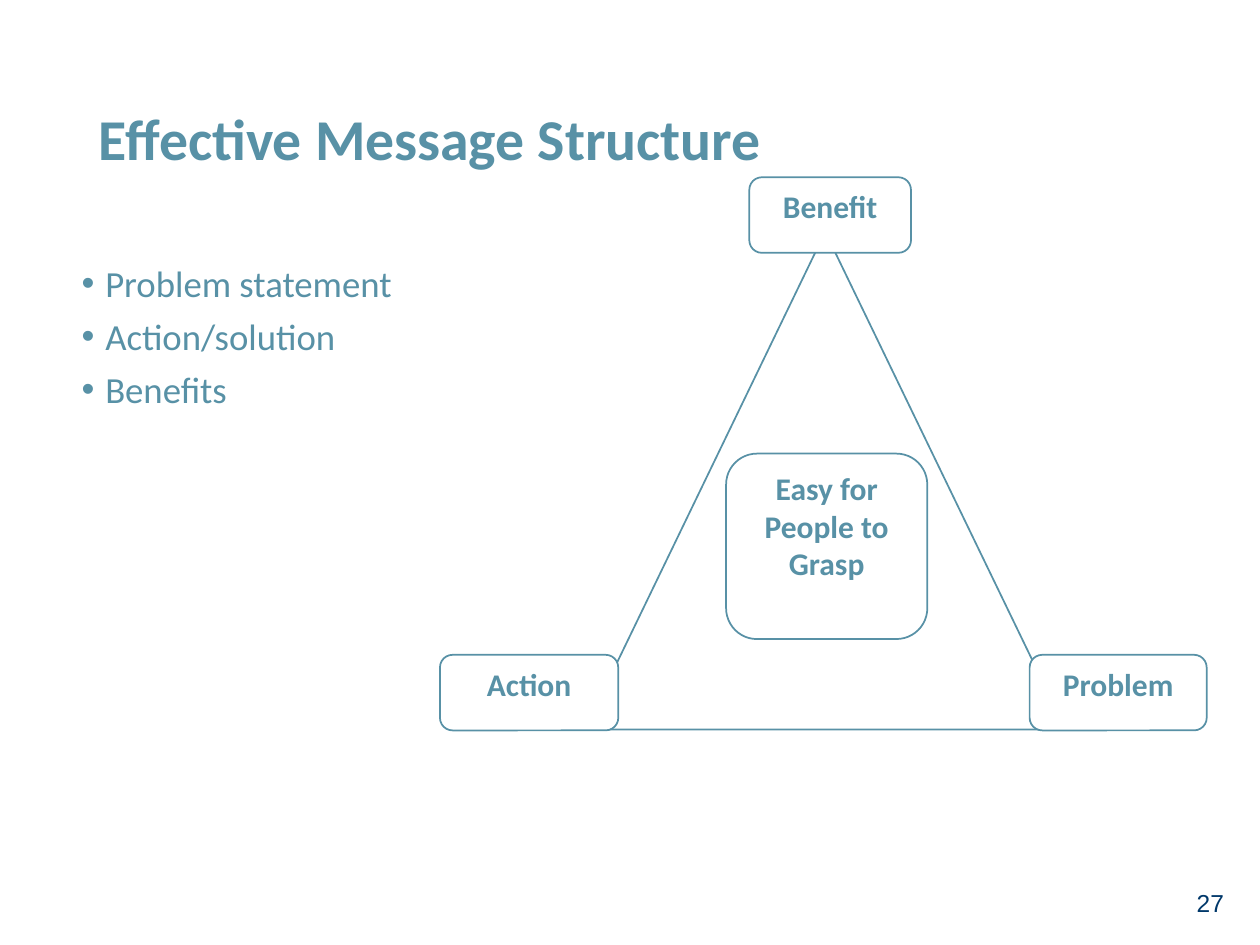
from dataclasses import dataclass

from lxml.etree import SubElement
from pptx import Presentation
from pptx.dml.color import RGBColor
from pptx.enum.shapes import MSO_SHAPE
from pptx.enum.text import MSO_ANCHOR, PP_ALIGN
from pptx.oxml.ns import qn
from pptx.util import Pt


@dataclass(frozen=True)
class Theme:
    teal: RGBColor = RGBColor(0x58, 0x91, 0xA6)
    navy: RGBColor = RGBColor(0x00, 0x38, 0x6A)
    white: RGBColor = RGBColor(0xFF, 0xFF, 0xFF)
    font: str = "Calibri"
    number_font: str = "Arial"
    title_size: int = 33
    bullet_size: int = 21
    label_size: int = 18
    number_size: int = 14


theme = Theme()


def write(paragraph, text, size, bold=False, color=theme.teal, font=theme.font):
    run = paragraph.add_run()
    run.text = text
    run.font.size = Pt(size)
    run.font.bold = bold
    run.font.name = font
    run.font.color.rgb = color


def add_outlined(kind, left, top, width, height):
    """Add a white shape with a thin teal outline."""
    shape = slide.shapes.add_shape(kind, Pt(left), Pt(top), Pt(width), Pt(height))
    shape.shadow.inherit = False
    shape.fill.solid()
    shape.fill.fore_color.rgb = theme.white
    shape.line.color.rgb = theme.teal
    shape.line.width = Pt(1)
    return shape


presentation = Presentation()
presentation.slide_width = Pt(720)
presentation.slide_height = Pt(540)
slide = presentation.slides.add_slide(presentation.slide_layouts[6])

# Page number
page_number = slide.shapes.add_textbox(Pt(556.5), Pt(504), Pt(150), Pt(36)).text_frame
page_number.word_wrap = True
page_number.paragraphs[0].alignment = PP_ALIGN.RIGHT
write(page_number.paragraphs[0], "27", theme.number_size,
      color=theme.navy, font=theme.number_font)

# Title
title = slide.shapes.add_textbox(Pt(49.5), Pt(28.8), Pt(621), Pt(104.4)).text_frame
title.word_wrap = True
title.vertical_anchor = MSO_ANCHOR.MIDDLE
title.paragraphs[0].line_spacing = 0.9
write(title.paragraphs[0], "Effective Message Structure", theme.title_size, bold=True)

# Message parts
message_parts = slide.shapes.add_textbox(Pt(39.6), Pt(148.3), Pt(576), Pt(268.6)).text_frame
message_parts.word_wrap = True
for index, part in enumerate(["Problem statement", "Action/solution", "Benefits"]):
    paragraph = message_parts.add_paragraph() if index else message_parts.paragraphs[0]
    properties = paragraph._p.get_or_add_pPr()
    properties.set("marL", str(Pt(13.5)))
    properties.set("indent", str(-Pt(13.5)))
    SubElement(properties, qn("a:buFont"), typeface="Arial")
    SubElement(properties, qn("a:buChar"), char="•")
    paragraph.line_spacing = 0.9
    if index:
        paragraph.space_before = Pt(7.5)
    write(paragraph, part, theme.bullet_size)

# Message triangle, with a label on each corner and one inside
add_outlined(MSO_SHAPE.ISOSCELES_TRIANGLE, 334.1, 132.5, 275, 284.4)
labels = [
    ("Benefit", 428.2, 101.3, 92.4, 43.2),
    ("Problem", 588.4, 374.2, 101.2, 43.2),
    ("Action", 251.4, 374.2, 101.9, 43.2),
    ("Easy for People to Grasp", 414.9, 259.2, 115, 106),
]
for label, *place in labels:
    box = add_outlined(MSO_SHAPE.ROUNDED_RECTANGLE, *place)
    box.text_frame.word_wrap = True
    box.text_frame.vertical_anchor = MSO_ANCHOR.TOP
    paragraph = box.text_frame.paragraphs[0]
    paragraph.alignment = PP_ALIGN.CENTER
    paragraph.space_after = Pt(10)
    write(paragraph, label, theme.label_size, bold=True)

presentation.save("out.pptx")
